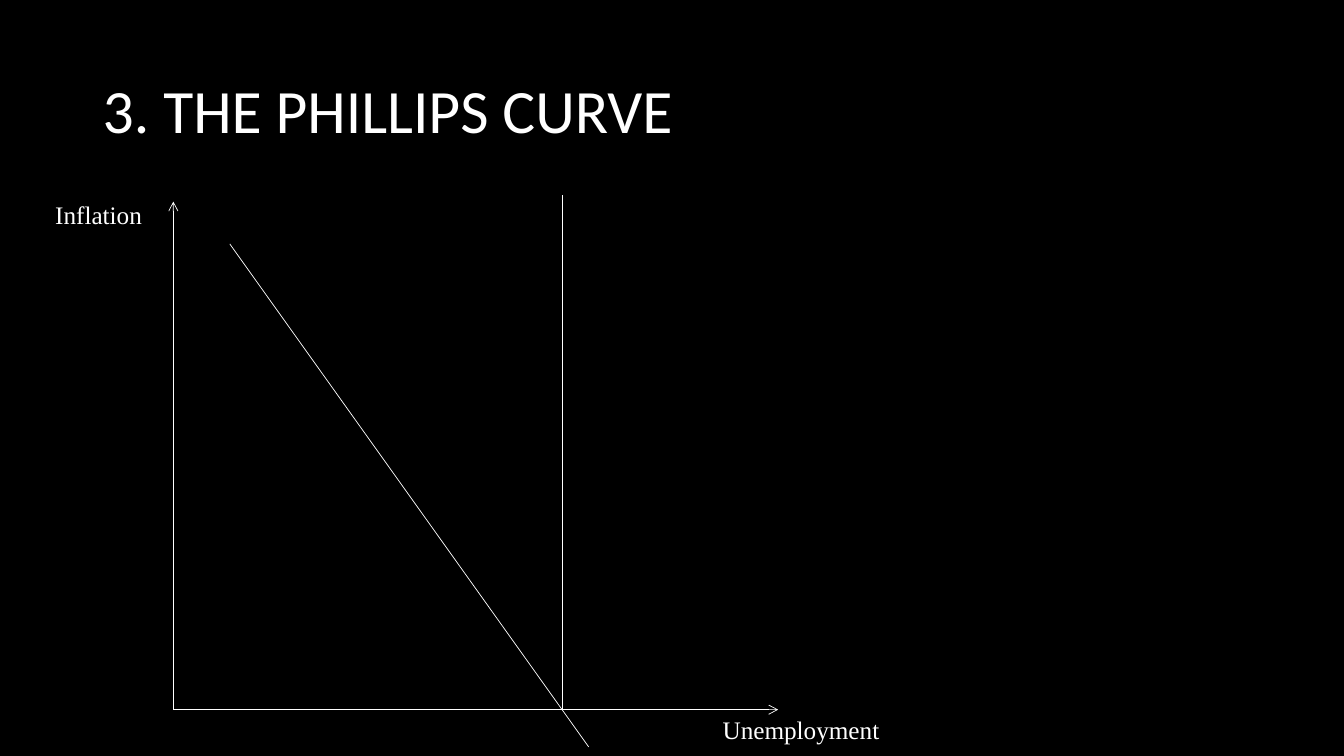
import pptx
import pptx.dml.color
import pptx.enum.shapes
import pptx.enum.text
import pptx.oxml.ns
import pptx.util
from collections import namedtuple
from lxml import etree

BLACK = pptx.dml.color.RGBColor(0, 0, 0)
WHITE = pptx.dml.color.RGBColor(255, 255, 255)

Box = namedtuple("Box", "left top width height")


def point_in(box, across, down):
    return (round(box.left + box.width * across / 100),
            round(box.top + box.height * down / 100))


def part_of(box, left, top, width, height):
    return Box(*point_in(box, left, top),
               round(box.width * width / 100), round(box.height * height / 100))


def add_text(page, box, text, font_name, size):
    text_box = page.shapes.add_textbox(*box)
    frame = text_box.text_frame
    frame.word_wrap = True
    frame.text = text
    font = frame.paragraphs[0].runs[0].font
    font.name = font_name
    font.size = pptx.util.Pt(size)
    font.color.rgb = WHITE
    return frame


def add_line(page, start, end, arrow=False):
    line = page.shapes.add_connector(
        pptx.enum.shapes.MSO_CONNECTOR.STRAIGHT, *start, *end)
    line.line.color.rgb = WHITE
    line.line.width = pptx.util.Pt(0.5)
    if arrow:
        outline = line.line._get_or_add_ln()
        etree.SubElement(outline, pptx.oxml.ns.qn("a:tailEnd"), type="arrow")
    etree.SubElement(line._element.spPr, pptx.oxml.ns.qn("a:effectLst"))


def add_title(page, box):
    frame = add_text(page, box, "3. THE PHILLIPS CURVE", "Calibri", 44)
    frame.vertical_anchor = pptx.enum.text.MSO_ANCHOR.MIDDLE
    frame.paragraphs[0].line_spacing = 0.9


def add_phillips_diagram(page, box):
    origin = point_in(box, 0, 100)
    add_line(page, origin, point_in(box, 0, 0), arrow=True)
    add_line(page, origin, point_in(box, 100, 100), arrow=True)
    add_line(page, point_in(box, 9.33, 8.33), point_in(box, 68.67, 107.34))
    add_line(page, point_in(box, 64.33, 100), point_in(box, 64.33, -1.39))

    axis_labels = [
        ("Inflation", (-21.17, -1.39, 21.17, 7.94)),
        ("Unemployment", (89.17, 100, 29.5, 7.94)),
    ]
    for text, shares in axis_labels:
        frame = add_text(page, part_of(box, *shares), text, "Times New Roman", 18)
        frame.auto_size = pptx.enum.text.MSO_AUTO_SIZE.SHAPE_TO_FIT_TEXT


def main():
    deck = pptx.Presentation()
    deck.slide_width = pptx.util.Inches(13.33)
    deck.slide_height = pptx.util.Inches(7.5)
    page = deck.slides.add_slide(deck.slide_layouts[6])
    page.background.fill.solid()
    page.background.fill.fore_color.rgb = BLACK

    whole = Box(0, 0, deck.slide_width, deck.slide_height)
    add_title(page, part_of(whole, 6.9, 5.33, 86.25, 19.33))
    add_phillips_diagram(page, part_of(whole, 12.9, 26.67, 45, 67.2))
    deck.save("out.pptx")


if __name__ == "__main__":
    main()
